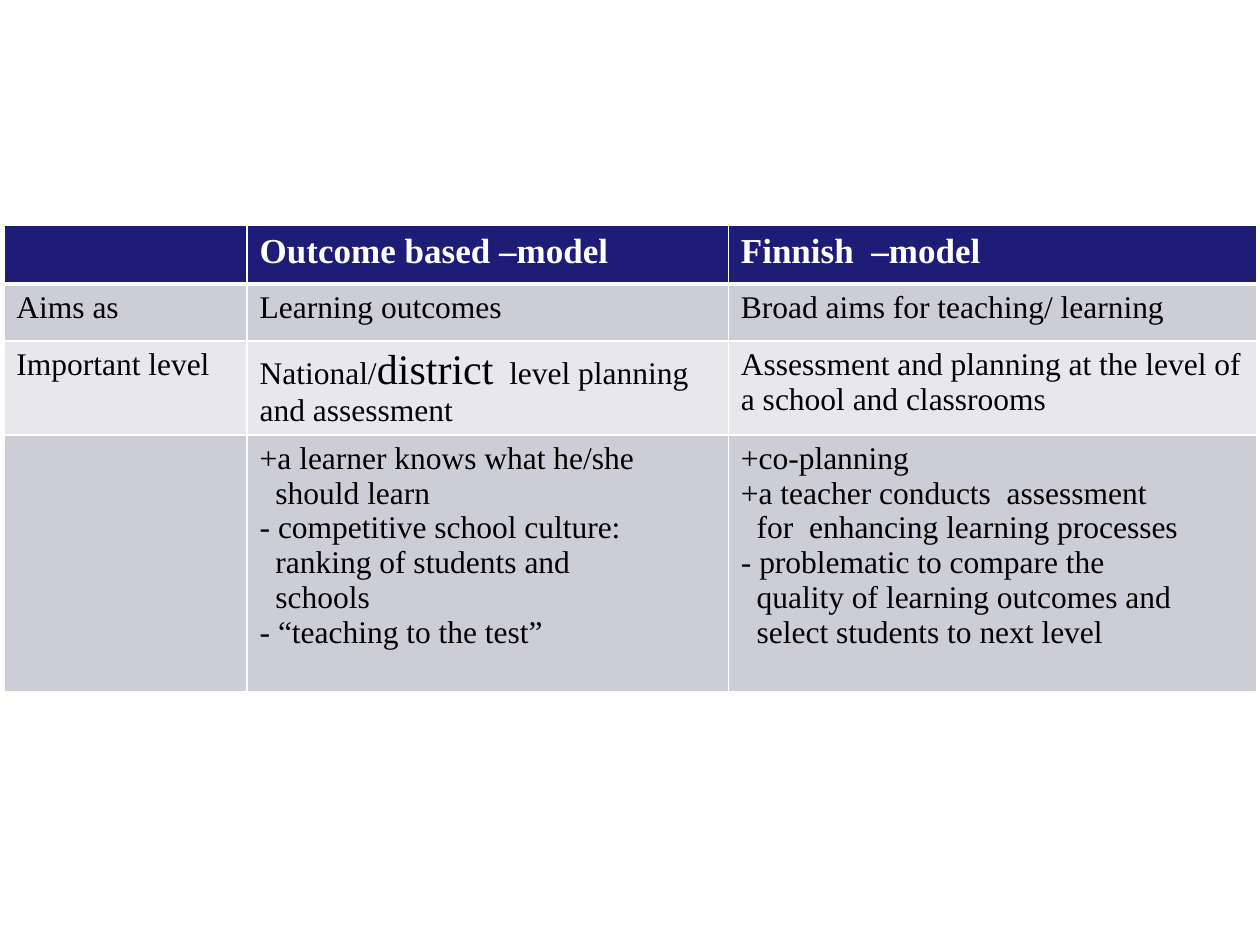
from dataclasses import dataclass

from lxml import etree
from pptx import Presentation
from pptx.dml.color import RGBColor
from pptx.oxml.ns import qn
from pptx.util import Pt

FONT = "Times New Roman"
WHITE = RGBColor(0xFF, 0xFF, 0xFF)
BLACK = RGBColor(0x00, 0x00, 0x00)
NAVY = RGBColor(0x1E, 0x1C, 0x77)
GREY = RGBColor(0xCD, 0xCD, 0xD7)
PALE_GREY = RGBColor(0xE8, 0xE8, 0xEC)

BODY_SIZE = 18
HANGING = 9
THIN, THICK = 1, 3
COLUMN_WIDTHS = (139, 275, 301.7)
TABLE_LEFT, TABLE_TOP = 2.2, 128.9


@dataclass(frozen=True)
class Span:
    text: str
    size: float = BODY_SIZE


@dataclass(frozen=True)
class Para:
    lines: tuple[tuple[Span, ...], ...]
    hanging: float = 0


@dataclass(frozen=True)
class Row:
    height: float
    fill: RGBColor
    cells: tuple[tuple[Para, ...], ...]
    color: RGBColor = BLACK
    bold: bool = False
    top: float = THIN
    bottom: float = THIN


def plain(text: str, size: float = BODY_SIZE) -> tuple[Para, ...]:
    return (Para(((Span(text, size),),)),)


def point(*lines: str) -> Para:
    """A plus or minus point whose later lines hang under the first."""
    return Para(tuple((Span(line),) for line in lines), HANGING)


ROWS = (
    Row(33.5, NAVY,
        ((), plain("Outcome based –model", 20), plain("Finnish  –model", 20)),
        color=WHITE, bold=True, bottom=THICK),
    Row(32.4, GREY,
        (plain("Aims as"), plain("Learning outcomes"),
         plain("Broad aims for teaching/ learning")),
        top=THICK),
    Row(53.6, PALE_GREY,
        (plain("Important level"),
         (Para(((Span("National/"), Span("district", 24),
                 Span("  level planning and assessment")),)),),
         plain("Assessment and planning at the level of a school and classrooms"))),
    Row(146.6, GREY,
        ((),
         (point("+a learner knows what he/she", "should learn"),
          point("- competitive school culture:", "ranking of students and", "schools"),
          point("- “teaching to the test”")),
         (point("+co-planning"),
          point("+a teacher conducts  assessment",
                "for  enhancing learning processes"),
          point("- problematic to compare the",
                "quality of learning outcomes and",
                "select students to next level")))),
)


def set_borders(cell, top: float, bottom: float) -> None:
    properties = cell._tc.get_or_add_tcPr()
    for side, width in (("L", THIN), ("R", THIN), ("T", top), ("B", bottom)):
        line = etree.SubElement(properties, qn(f"a:ln{side}"), w=str(Pt(width)))
        fill = etree.SubElement(line, qn("a:solidFill"))
        etree.SubElement(fill, qn("a:srgbClr"), val=str(WHITE))


def write_para(paragraph, para: Para, row: Row) -> None:
    if para.hanging:
        properties = paragraph._p.get_or_add_pPr()
        properties.set("marL", str(Pt(para.hanging)))
        properties.set("indent", str(-Pt(para.hanging)))
    paragraph.font.size = Pt(BODY_SIZE)
    for number, line in enumerate(para.lines):
        if number:
            paragraph.add_line_break()
        for span in line:
            run = paragraph.add_run()
            run.text = span.text
            run.font.name = FONT
            run.font.size = Pt(span.size)
            run.font.bold = row.bold
            run.font.color.rgb = row.color


def fill_cell(cell, paras: tuple[Para, ...], row: Row) -> None:
    set_borders(cell, row.top, row.bottom)
    cell.fill.solid()
    cell.fill.fore_color.rgb = row.fill
    frame = cell.text_frame
    for number, para in enumerate(paras):
        paragraph = frame.add_paragraph() if number else frame.paragraphs[0]
        write_para(paragraph, para, row)


def add_comparison(page) -> None:
    table = page.shapes.add_table(
        len(ROWS), len(COLUMN_WIDTHS), Pt(TABLE_LEFT), Pt(TABLE_TOP),
        Pt(sum(COLUMN_WIDTHS)), Pt(sum(row.height for row in ROWS))).table
    for column, width in zip(table.columns, COLUMN_WIDTHS):
        column.width = Pt(width)
    for table_row, row in zip(table.rows, ROWS):
        table_row.height = Pt(row.height)
        for cell, paras in zip(table_row.cells, row.cells):
            fill_cell(cell, paras, row)


def main() -> None:
    deck = Presentation()
    deck.slide_width, deck.slide_height = Pt(720), Pt(540)
    page = deck.slides.add_slide(deck.slide_layouts[6])
    add_comparison(page)
    deck.save("out.pptx")


if __name__ == "__main__":
    main()
